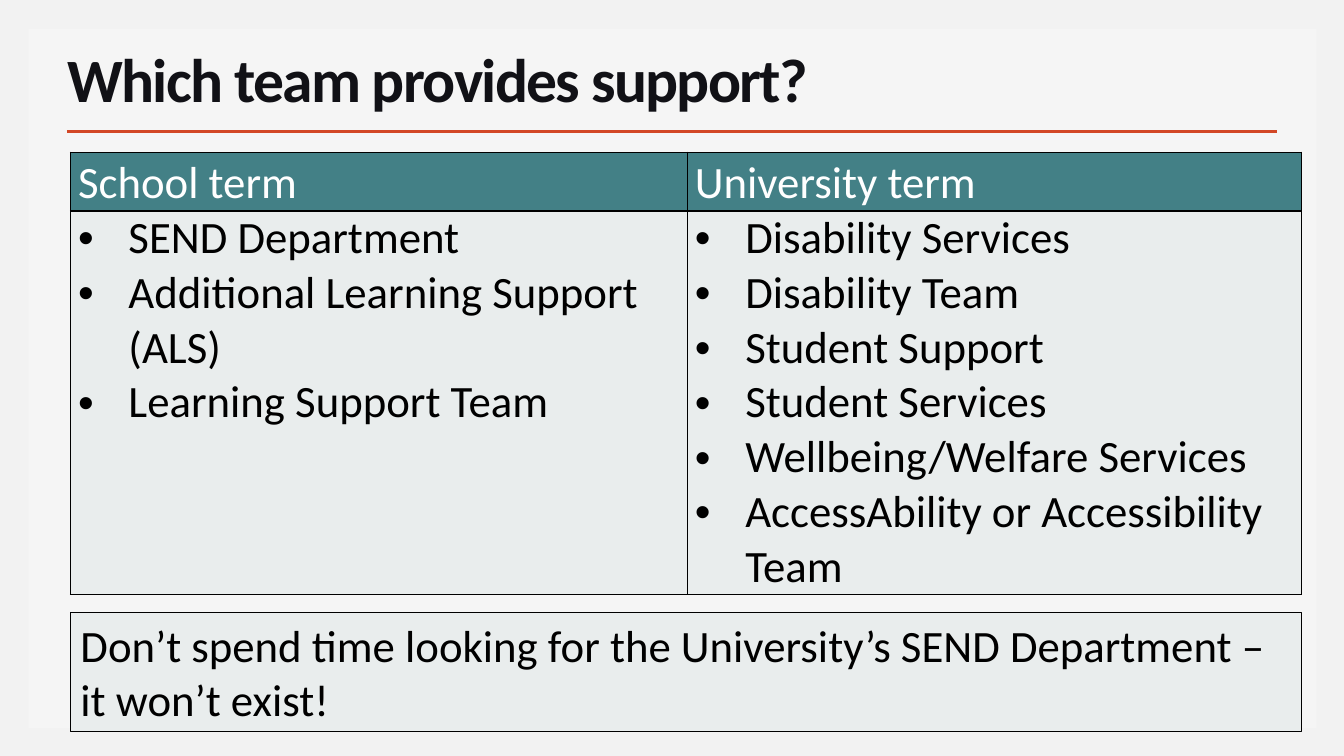
from dataclasses import dataclass

from lxml import etree
from pptx import Presentation
from pptx import util as u
from pptx.dml.color import RGBColor
from pptx.enum import shapes, text
from pptx.oxml import ns

COLOURS = {
    "page": "F2F2F2",
    "panel": "F5F5F5",
    "title": "111116",
    "rule": "D24726",
    "header": "438086",
    "body": "E9EDED",
    "white": "FFFFFF",
    "black": "000000",
}
FONT = "Calibri"
BODY_SIZE = 32
TABLE_LEFT, TABLE_TOP, TABLE_WIDTH = 50.4, 108.7, 879.1
HEADER_HEIGHT, BODY_HEIGHT = 42, 274
BULLET_INDENT = 36


@dataclass(frozen=True)
class TermColumn:
    heading: str
    teams: tuple[str, ...]
    width: float


@dataclass(frozen=True)
class Panel:
    left: float
    top: float
    width: float
    height: float
    fill: str
    outline: str | None = None


TERMS = (
    TermColumn(
        "School term",
        ("SEND Department", "Additional Learning Support (ALS)", "Learning Support Team"),
        440.6,
    ),
    TermColumn(
        "University term",
        (
            "Disability Services",
            "Disability Team",
            "Student Support",
            "Student Services",
            "Wellbeing/Welfare Services",
            "AccessAbility or Accessibility Team",
        ),
        438.5,
    ),
)
BACKDROP = Panel(20.2, 20.9, 920.2, 499, "panel")
ADVICE = Panel(TABLE_LEFT, 437.6, TABLE_WIDTH, 85, "body", "black")


def colour(name: str) -> RGBColor:
    return RGBColor.from_string(COLOURS[name])


def format_runs(para, size: float, name: str, bold: bool = False) -> None:
    for span in para.runs:
        span.font.name = FONT
        span.font.size = u.Pt(size)
        span.font.bold = bold
        span.font.color.rgb = colour(name)


def add_panel(page, panel: Panel):
    box = page.shapes.add_shape(
        shapes.MSO_SHAPE.RECTANGLE,
        u.Pt(panel.left), u.Pt(panel.top), u.Pt(panel.width), u.Pt(panel.height),
    )
    box.shadow.inherit = False
    box.fill.solid()
    box.fill.fore_color.rgb = colour(panel.fill)
    if panel.outline:
        box.line.color.rgb = colour(panel.outline)
        box.line.width = u.Pt(0.75)
    else:
        box.line.fill.background()
    return box


def add_rule(page) -> None:
    rule = page.shapes.add_connector(
        shapes.MSO_CONNECTOR.STRAIGHT, u.Pt(47.8), u.Pt(94), u.Pt(912.2), u.Pt(94)
    )
    rule.line.color.rgb = colour("rule")
    rule.line.width = u.Pt(2)
    etree.SubElement(rule._element.spPr, ns.qn("a:effectLst"))


def add_title(page) -> None:
    box = page.shapes.add_textbox(u.Pt(41), u.Pt(35.3), u.Pt(868.3), u.Pt(50.4))
    frame = box.text_frame
    frame.word_wrap = True
    frame.vertical_anchor = text.MSO_ANCHOR.BOTTOM
    frame.text = "Which team provides support?"
    para = frame.paragraphs[0]
    para.line_spacing = 0.85
    format_runs(para, 44, "title", bold=True)
    para.runs[0].font._element.set("spc", "-120")


def add_bullet(para) -> None:
    properties = para._p.get_or_add_pPr()
    properties.set("marL", str(u.Pt(BULLET_INDENT)))
    properties.set("indent", str(-u.Pt(BULLET_INDENT)))
    etree.SubElement(properties, ns.qn("a:buFont"), typeface="Arial")
    etree.SubElement(properties, ns.qn("a:buChar"), char="•")


def style_cell(cell, fill: str) -> None:
    cell.margin_left = cell.margin_right = u.Pt(5.4)
    cell.margin_top = cell.margin_bottom = u.Pt(0)
    properties = cell._tc.get_or_add_tcPr()
    for side in ("lnL", "lnR", "lnT", "lnB"):
        border = etree.SubElement(properties, ns.qn(f"a:{side}"), w=str(u.Pt(1)))
        solid = etree.SubElement(border, ns.qn("a:solidFill"))
        etree.SubElement(solid, ns.qn("a:srgbClr"), val=COLOURS["black"])
    cell.fill.solid()
    cell.fill.fore_color.rgb = colour(fill)


def add_terms_table(page) -> None:
    table = page.shapes.add_table(
        2, len(TERMS),
        u.Pt(TABLE_LEFT), u.Pt(TABLE_TOP),
        u.Pt(TABLE_WIDTH), u.Pt(HEADER_HEIGHT + BODY_HEIGHT),
    ).table
    table.horz_banding = False
    table.first_row = False
    table.rows[0].height = u.Pt(HEADER_HEIGHT)
    table.rows[1].height = u.Pt(BODY_HEIGHT)
    for index, term in enumerate(TERMS):
        table.columns[index].width = u.Pt(term.width)
        heading, teams = table.cell(0, index), table.cell(1, index)
        style_cell(heading, "header")
        style_cell(teams, "body")
        heading.text_frame.text = term.heading
        para = heading.text_frame.paragraphs[0]
        para.line_spacing = 1.07
        para.space_after = u.Pt(8)
        format_runs(para, BODY_SIZE, "white")
        teams.text_frame.text = "\n".join(term.teams)
        for para in teams.text_frame.paragraphs:
            add_bullet(para)
            format_runs(para, BODY_SIZE, "black")


def add_advice(page) -> None:
    frame = add_panel(page, ADVICE).text_frame
    frame.word_wrap = True
    frame.vertical_anchor = text.MSO_ANCHOR.TOP
    frame.text = (
        "Don’t spend time looking for the University’s SEND Department – it won’t exist!"
    )
    para = frame.paragraphs[0]
    para.alignment = text.PP_ALIGN.LEFT
    format_runs(para, BODY_SIZE, "black")


def main() -> None:
    deck = Presentation()
    deck.slide_width, deck.slide_height = u.Pt(960), u.Pt(540)
    page = deck.slides.add_slide(deck.slide_layouts[6])
    page.background.fill.solid()
    page.background.fill.fore_color.rgb = colour("page")
    add_panel(page, BACKDROP)
    add_rule(page)
    add_title(page)
    add_terms_table(page)
    add_advice(page)
    deck.save("out.pptx")


if __name__ == "__main__":
    main()
